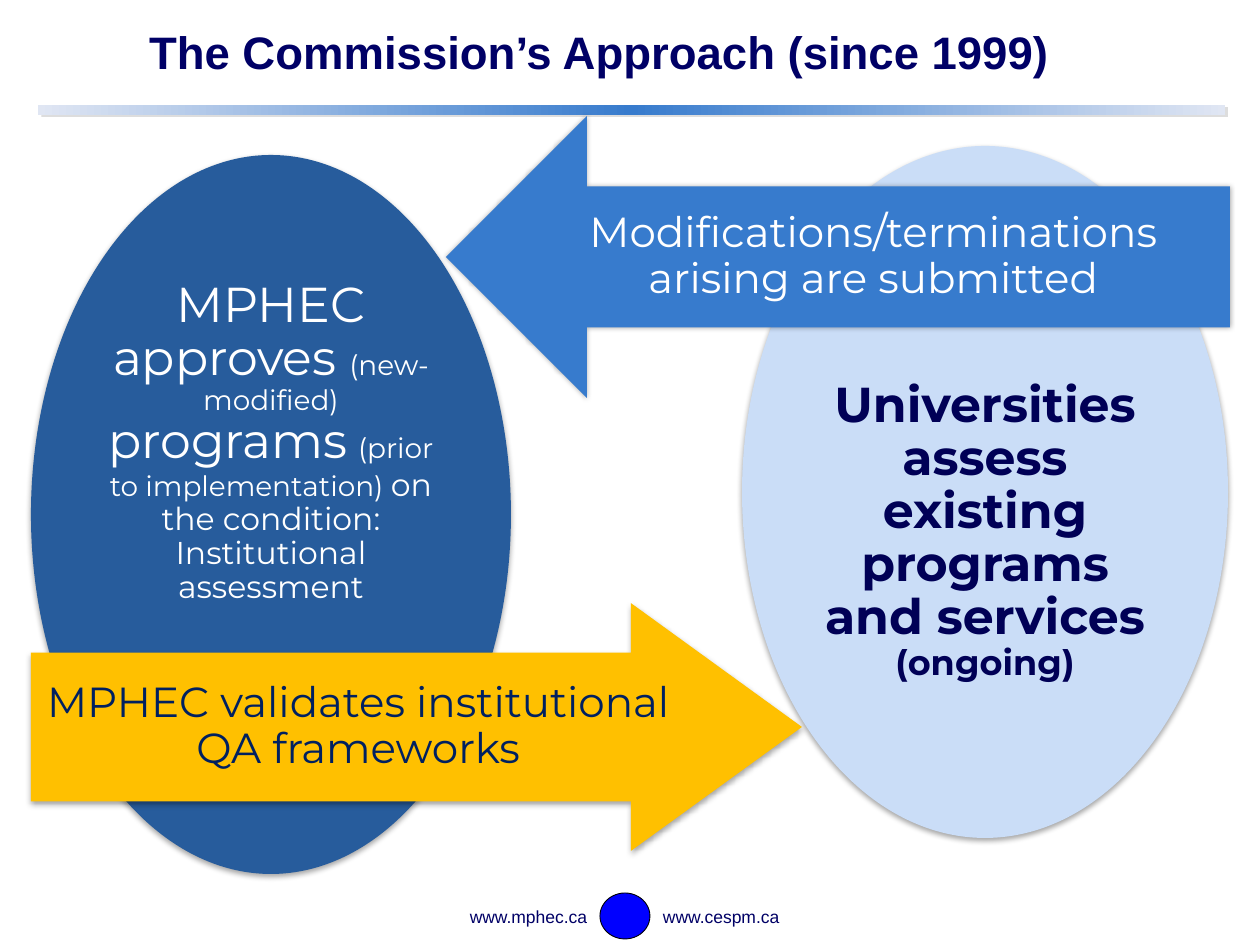
import copy

import pptx
import pptx.dml.color
import pptx.enum.shapes
import pptx.enum.text
import pptx.oxml.ns
import pptx.util
from lxml import etree

PX = 914400 / 126
COLORS = {
    "navy": "000066", "ink": "000056", "deep": "275C9C", "mid": "377BCD",
    "pale": "CADDF7", "bar_end": "E0E6F3", "gold": "FFC000", "gold_text": "002060",
    "white": "FFFFFF", "black": "000000", "emblem": "0000FF", "bar_shadow": "DDDDDD",
}
KINDS = pptx.enum.shapes.MSO_SHAPE
ALIGN = pptx.enum.text.PP_ALIGN
ANCHOR = pptx.enum.text.MSO_ANCHOR

TITLE = [("The Commission’s Approach (since 1999)", 26)]
FOOTERS = [
    ((372, 900, 228, 34), [("www.mphec.ca", 10)], ALIGN.RIGHT),
    ((650, 900, 158, 34), [("www.cespm.ca", 10)], ALIGN.LEFT),
]
SOFT = dict(color="black", alpha=35, blur=3.1, distance=1.8, angle=90)
GLOW = dict(SOFT, distance=0, angle=0)
BAR_SHADOW = dict(color="bar_shadow", alpha=100, blur=0, distance=2.2, angle=27)

STAGES = [
    dict(kind=KINDS.OVAL, box=(31, 155, 480, 719), fill="deep", shadow=SOFT,
         runs=[("MPHEC approves ", 28), ("(new-modified) ", 16), ("programs", 28),
               (" ", 24), ("(prior to implementation) ", 16),
               ("on the condition: Institutional assessment", 18)],
         style=dict(color="white", anchor=ANCHOR.TOP, insets=(4, 20, 4, 0))),
    dict(kind=KINDS.OVAL, box=(742, 146, 486, 692), fill="pale", shadow=SOFT,
         runs=[("Universities assess existing programs and services ", 28),
               ("(ongoing)", 20)],
         style=dict(color="ink", bold=True, anchor=ANCHOR.TOP, insets=(4, 133, 4, 0))),
    dict(kind=KINDS.RIGHT_ARROW, box=(31, 603, 771, 248), fill="gold", shadow=SOFT,
         adjustments=(0.6, 0.69),
         runs=[("MPHEC validates institutional QA frameworks", 24)],
         style=dict(color="gold_text", insets=(8, 4, 22, 4))),
    dict(kind=KINDS.LEFT_ARROW, box=(446, 116, 784, 282), fill="mid", shadow=GLOW,
         runs=[("Modifications/terminations arising are submitted", 24)],
         style=dict(color="white")),
]


def rgb(name):
    return pptx.dml.color.RGBColor.from_string(COLORS[name])


def place(box):
    return [round(value * PX) for value in box]


def write(shape, runs, color="navy", font="Montserrat", bold=False, align=ALIGN.CENTER,
          anchor=ANCHOR.MIDDLE, insets=(13, 6, 13, 6), spacing=0.9):
    frame = shape.text_frame
    frame.word_wrap = True
    frame.vertical_anchor = anchor
    (frame.margin_left, frame.margin_top,
     frame.margin_right, frame.margin_bottom) = place(insets)
    paragraph = frame.paragraphs[0]
    paragraph.alignment = align
    paragraph.line_spacing = spacing
    for text, size in runs:
        run = paragraph.add_run()
        run.text = text
        run.font.size = pptx.util.Pt(size)
        run.font.name = font
        run.font.bold = bold
        run.font.color.rgb = rgb(color)


def cast_shadow(shape, color, alpha, blur, distance, angle):
    qn = pptx.oxml.ns.qn
    effects = shape._element.spPr.find(qn("a:effectLst"))
    outer = etree.SubElement(effects, qn("a:outerShdw"), {
        "blurRad": str(pptx.util.Pt(blur)), "dist": str(pptx.util.Pt(distance)),
        "dir": str(angle * 60000), "algn": "ctr", "rotWithShape": "0"})
    tint = etree.SubElement(outer, qn("a:srgbClr"), val=COLORS[color])
    etree.SubElement(tint, qn("a:alpha"), val=str(alpha * 1000))


def add_figure(slide, kind, box, fill, shadow=None, adjustments=()):
    shape = slide.shapes.add_shape(kind, *place(box))
    shape.shadow.inherit = False
    shape.fill.solid()
    shape.fill.fore_color.rgb = rgb(fill)
    shape.line.fill.background()
    for index, value in enumerate(adjustments):
        shape.adjustments[index] = value
    if shadow:
        cast_shadow(shape, **shadow)
    return shape


def blend(shape, colors):
    shape.fill.gradient()
    shape.fill.gradient_angle = 0
    stop_list = shape._element.spPr.find(".//" + pptx.oxml.ns.qn("a:gsLst"))
    stop_list.insert(1, copy.deepcopy(stop_list[0]))
    for index, (stop, color) in enumerate(zip(shape.fill.gradient_stops, colors)):
        stop.position = index / (len(colors) - 1)
        stop.color.rgb = rgb(color)


def main():
    deck = pptx.Presentation()
    deck.slide_width, deck.slide_height = place((1260, 945))
    slide = deck.slides.add_slide(deck.slide_layouts[6])

    bar = add_figure(slide, KINDS.RECTANGLE, (38, 105, 1187, 10), "mid", BAR_SHADOW)
    blend(bar, ("bar_end", "mid", "bar_end"))

    emblem = add_figure(slide, KINDS.OVAL, (600, 893, 50, 46), "emblem")
    emblem.line.color.rgb = rgb("black")
    emblem.line.width = pptx.util.Pt(0.5)

    for box, runs, align in FOOTERS:
        address = slide.shapes.add_textbox(*place(box))
        write(address, runs, font="Arial", align=align, anchor=ANCHOR.TOP, spacing=1.0)

    title = slide.shapes.add_textbox(*place((136, 4, 1087, 102)))
    write(title, TITLE, font="Arial", bold=True, align=ALIGN.LEFT)

    for stage in STAGES:
        figure = add_figure(slide, stage["kind"], stage["box"], stage["fill"],
                            stage["shadow"], stage.get("adjustments", ()))
        write(figure, stage["runs"], **stage["style"])

    deck.save("out.pptx")


if __name__ == "__main__":
    main()
